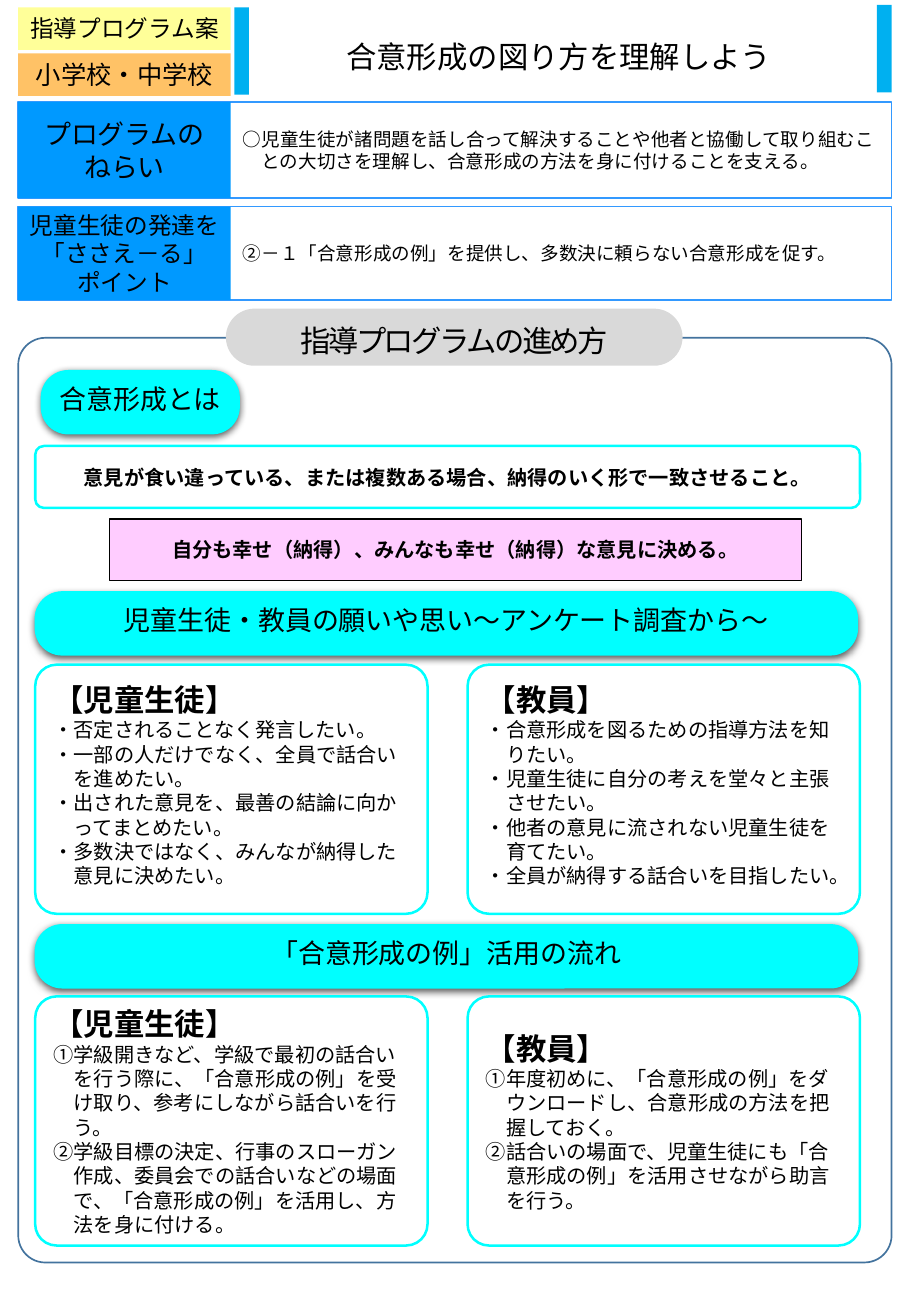
import pptx
import pptx.util
import pptx.dml.color
import pptx.enum.shapes
import pptx.enum.text
import pptx.oxml
import pptx.oxml.ns

Inches, Pt = pptx.util.Inches, pptx.util.Pt
Align, Anchor = pptx.enum.text.PP_ALIGN, pptx.enum.text.MSO_ANCHOR
RECT = pptx.enum.shapes.MSO_SHAPE.RECTANGLE
ROUND = pptx.enum.shapes.MSO_SHAPE.ROUNDED_RECTANGLE

# Content: "\v" is a line break inside a paragraph
TITLE = "合意形成の図り方を理解しよう"
TAGS = [("指導プログラム案", 0.06, "tag_top", 14), ("小学校・中学校", 0.44, "tag_school", 15)]
SUMMARY = [
    (0.84, 0.79, 16, ["プログラムの", "ねらい"],
     "○児童生徒が諸問題を話し合って解決することや他者と協働して取り組むこ\v"
     "との大切さを理解し、合意形成の方法を身に付けることを支える。"),
    (1.7, 0.77, 14, ["児童生徒の発達を", "「ささえ－る」", "ポイント"],
     "②－１「合意形成の例」を提供し、多数決に頼らない合意形成を促す。"),
]
STEPS_TITLE = "指導プログラムの進め方"
BANNERS = [
    ("合意形成とは", 0.34, 3.05, 1.63),
    ("児童生徒・教員の願いや思い～アンケート調査から～", 0.29, 4.87, 6.77),
    ("「合意形成の例」活用の流れ", 0.29, 7.61, 6.77),
]
DEFINITION = "意見が食い違っている、または複数ある場合、納得のいく形で一致させること。"
GOAL = "自分も幸せ（納得）、みんなも幸せ（納得）な意見に決める。"
CARD_ROWS = [
    (5.47, 0.12, [
        ("【児童生徒】", [
            "・否定されることなく発言したい。",
            "・一部の人だけでなく、全員で話合い\vを進めたい。",
            "・出された意見を、最善の結論に向か\vってまとめたい。",
            "・多数決ではなく、みんなが納得した\v意見に決めたい。"]),
        ("【教員】", [
            "・合意形成を図るための指導方法を知\vりたい。",
            "・児童生徒に自分の考えを堂々と主張\vさせたい。",
            "・他者の意見に流されない児童生徒を\v育てたい。",
            "・全員が納得する話合いを目指したい。"])]),
    (8.2, 0.04, [
        ("【児童生徒】", [
            "①学級開きなど、学級で最初の話合い\vを行う際に、「合意形成の例」を受\v"
            "け取り、参考にしながら話合いを行\vう。",
            "②学級目標の決定、行事のスローガン\v作成、委員会での話合いなどの場面\v"
            "で、「合意形成の例」を活用し、方\v法を身に付ける。"]),
        ("【教員】", [
            "①年度初めに、「合意形成の例」をダ\vウンロードし、合意形成の方法を把\v握しておく。",
            "②話合いの場面で、児童生徒にも「合\v意形成の例」を活用させながら助言\vを行う。"])]),
]

THEME = {
    "fonts": {"main": "Noto Sans CJK JP", "label": "Calibri"},
    "sizes": {"heading": 18, "banner": 16, "body": 12, "summary": 11},
    "colors": {"text": "000000", "cyan": "00FFFF", "white": "FFFFFF", "pink": "FFCCFF",
               "label": "0099FF", "frame": "3399FF", "outer": "43739E", "pill": "D9D9D9",
               "tag_top": "FFFF99", "tag_school": "FFC266", "bar": "00B0F0"},
}
SIZES = THEME["sizes"]
LEFT, FRAME_WIDTH, LABEL_WIDTH = 0.15, 7.19, 1.75
CARD_LEFT, CARD_WIDTH, CARD_HEIGHT, CARD_STEP = 0.29, 3.23, 2.05, 3.56


def color(name):
    return pptx.dml.color.RGBColor.from_string(THEME["colors"][name])


def write(shape, lines, size, font="main", bold=False, hanging=False, wrap=True,
          insets=(0.1, 0.05, 0.1, 0.05), anchor=Anchor.MIDDLE, **paragraph_format):
    """Each line is a text, or a (text, size, bold, hanging) tuple."""
    frame = shape.text_frame
    sides = ("margin_left", "margin_top", "margin_right", "margin_bottom")
    settings = dict(zip(sides, map(Inches, insets)), word_wrap=wrap, vertical_anchor=anchor,
                    auto_size=pptx.enum.text.MSO_AUTO_SIZE.NONE)
    for name, value in settings.items():
        setattr(frame, name, value)
    for index, line in enumerate(lines):
        text, points, heavy, hang = line if isinstance(line, tuple) else (line, size, bold, hanging)
        paragraph = frame.paragraphs[0] if index == 0 else frame.add_paragraph()
        paragraph.text = text
        for name, value in paragraph_format.items():
            setattr(paragraph, name, value)
        if hang:
            properties = paragraph._p.get_or_add_pPr()
            properties.set("marL", str(Pt(points)))
            properties.set("indent", str(-Pt(points)))
        for run in paragraph.runs:
            run.font.color.rgb = color("text")
            values = {"name": THEME["fonts"][font], "size": Pt(points), "bold": heavy}
            for name, value in values.items():
                setattr(run.font, name, value)
            east_asian = run._r.get_or_add_rPr().makeelement(
                pptx.oxml.ns.qn("a:ea"), {"typeface": THEME["fonts"][font]})
            run._r.rPr.find(pptx.oxml.ns.qn("a:latin")).addnext(east_asian)


def add_box(slide, kind, box, fill=None, line=None, weight=1, corner=None):
    shape = slide.shapes.add_shape(kind, *map(Inches, box))
    shape.shadow.inherit = False
    if corner is not None:
        shape.adjustments[0] = corner
    if fill:
        shape.fill.solid()
        shape.fill.fore_color.rgb = color(fill)
    else:
        shape.fill.background()
    if line:
        shape.line.color.rgb = color(line)
        shape.line.width = Pt(weight)
    else:
        shape.line.fill.background()
    return shape


def add_shadow(shape):
    effects = shape._element.spPr.find(pptx.oxml.ns.qn("a:effectLst"))
    effects.append(pptx.oxml.parse_xml(
        f'<a:outerShdw {pptx.oxml.ns.nsdecls("a")} blurRad="{Pt(4.5)}" dist="{Pt(1.5)}" '
        'dir="5400000" rotWithShape="0"><a:srgbClr val="000000"><a:alpha val="63000"/>'
        '</a:srgbClr></a:outerShdw>'))


def main():
    presentation = pptx.Presentation()
    presentation.slide_width, presentation.slide_height = Inches(7.5), Inches(10.83)
    slide = presentation.slides.add_slide(presentation.slide_layouts[5])

    # Title, side bars and tags
    title = slide.shapes.title
    title.left, title.top, title.width, title.height = map(Inches, (1.9, 0.21, 5.4, 0.5))
    write(title, [TITLE], SIZES["heading"], alignment=Align.CENTER)
    for left, top in ((1.93, 0.06), (7.22, 0.04)):
        add_box(slide, RECT, (left, top, 0.12, 0.72), "bar")
    for text, top, fill, size in TAGS:
        tag = add_box(slide, RECT, (LEFT, top, LABEL_WIDTH, 0.35), fill)
        write(tag, [text], size, "label", wrap=False, alignment=Align.CENTER)

    # Aim and support point
    for top, height, size, label_lines, text in SUMMARY:
        frame = add_box(slide, RECT, (LEFT, top, FRAME_WIDTH, height), line="frame")
        write(frame, [text], SIZES["summary"], hanging=True, alignment=Align.LEFT,
              insets=(LABEL_WIDTH + 0.1, 0.05, 0.05, 0.05))
        label = add_box(slide, RECT, (LEFT, top, LABEL_WIDTH, height), "label")
        write(label, label_lines, size, "label", wrap=False, alignment=Align.CENTER)

    # Outer frame with its heading
    add_box(slide, ROUND, (LEFT, 2.78, FRAME_WIDTH, 7.61), line="outer", corner=0.031)
    pill = add_box(slide, ROUND, (1.86, 2.54, 3.76, 0.47), "pill", corner=0.5)
    write(pill, [STEPS_TITLE], SIZES["heading"], alignment=Align.CENTER, line_spacing=1.2)
    for run in pill.text_frame.paragraphs[0].runs:
        run._r.rPr.set("spc", "-150")

    # Section banners
    for text, left, top, width in BANNERS:
        banner = add_box(slide, ROUND, (left, top, width, 0.52), "cyan", "cyan", 0.75, 0.427)
        add_shadow(banner)
        write(banner, [text], SIZES["banner"], wrap=False, alignment=Align.CENTER,
              line_spacing=Pt(15))

    # Definition and goal
    definition = add_box(slide, ROUND, (CARD_LEFT, 3.67, 6.79, 0.51), "white", "cyan", 1.5, 0.139)
    write(definition, [DEFINITION], SIZES["body"], bold=True, alignment=Align.CENTER)
    goal = add_box(slide, RECT, (0.9, 4.27, 5.7, 0.51), "pink", "text", 0.75)
    write(goal, [GOAL], SIZES["body"], "label", bold=True, wrap=False, alignment=Align.CENTER)

    # Cards for pupils and teachers
    for top, bottom_inset, cards in CARD_ROWS:
        for column, (heading, items) in enumerate(cards):
            box = (CARD_LEFT + column * CARD_STEP, top, CARD_WIDTH, CARD_HEIGHT)
            card = add_box(slide, ROUND, box, "white", "cyan", 1.5, 0.086)
            lines = [(heading, SIZES["heading"], True, False)] + items
            write(card, lines, SIZES["body"], hanging=True, alignment=Align.LEFT,
                  insets=(0.1, 0.04, 0.1, bottom_inset))

    presentation.save("out.pptx")


if __name__ == "__main__":
    main()
